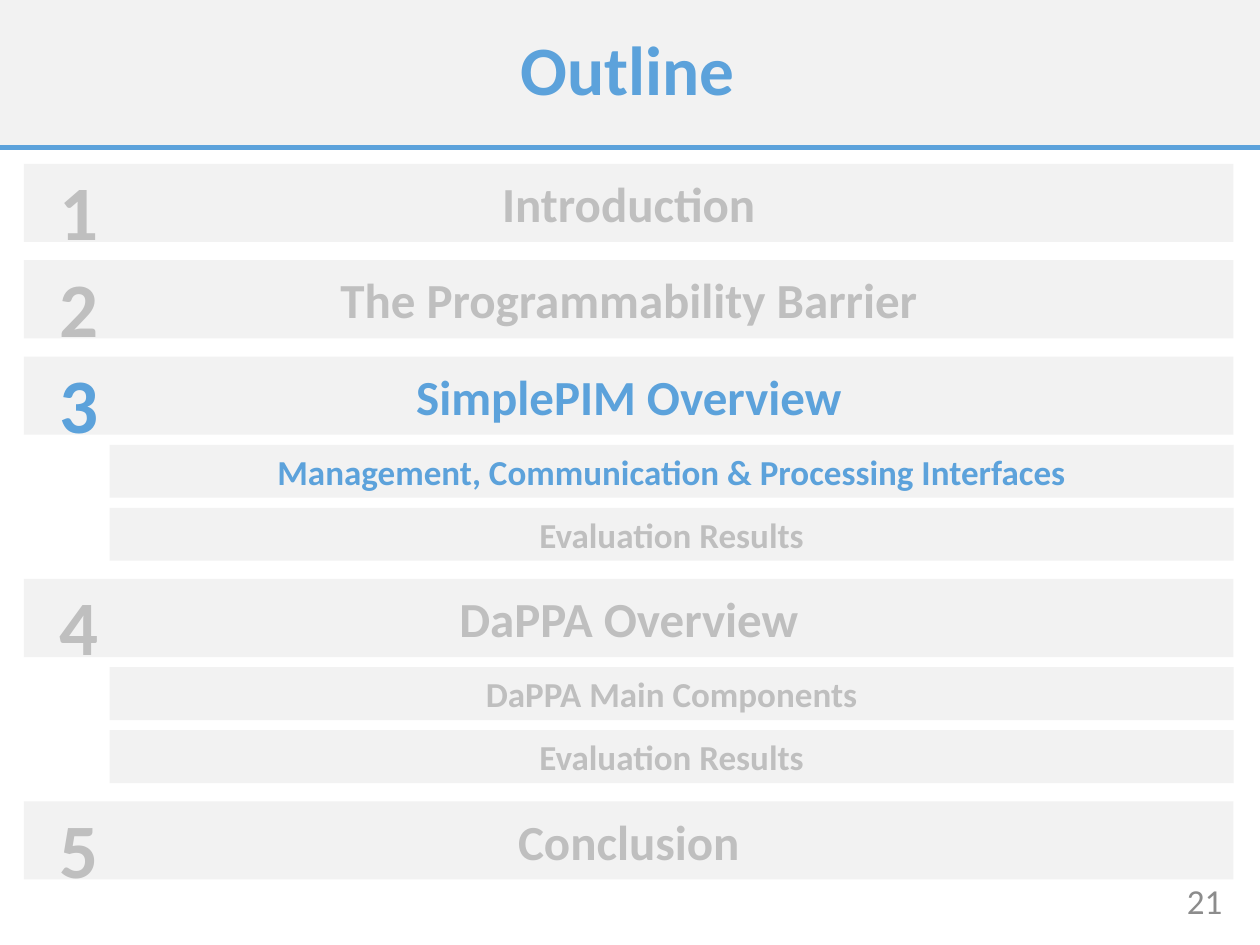
from dataclasses import dataclass

from pptx import Presentation
from pptx import util as u
from pptx.dml.color import RGBColor
from pptx.enum import shapes, text
from pptx.oxml.ns import qn
from lxml import etree

PX = u.Inches(1) // 200  # one scale: 200 px to the inch
COLORS = {"accent": "5CA2DB", "muted": "BFBFBF", "panel": "F2F2F2", "number": "8C8C8C"}
FONT = "Calibri"

# Outline grid, in px
LEFT, RIGHT, FIRST_TOP = 38, 1958, 260
BAR_HEIGHT, SECTION_GAP = 124, 29
SUB_LEFT, SUB_HEIGHT, SUB_GAP = 174, 84, 16
NUMBER_WIDTH = 176


@dataclass(frozen=True)
class Topic:
    label: str
    active: bool = False

    @property
    def color(self) -> str:
        return "accent" if self.active else "muted"


@dataclass(frozen=True)
class Section:
    topic: Topic
    subtopics: tuple[Topic, ...] = ()


SECTIONS = (
    Section(Topic("Introduction")),
    Section(Topic("The Programmability Barrier")),
    Section(Topic("SimplePIM Overview", True), (
        Topic("Management, Communication & Processing Interfaces", True),
        Topic("Evaluation Results"),
    )),
    Section(Topic("DaPPA Overview"), (
        Topic("DaPPA Main Components"),
        Topic("Evaluation Results"),
    )),
    Section(Topic("Conclusion")),
)


def rgb(name: str) -> RGBColor:
    return RGBColor.from_string(COLORS[name])


def px(*lengths: int) -> list[int]:
    return [length * PX for length in lengths]


def write(shape, words: str, size: float, color: str, bold: bool = True,
          align=text.PP_ALIGN.CENTER, anchor=text.MSO_ANCHOR.MIDDLE):
    frame = shape.text_frame
    frame.word_wrap = True
    frame.vertical_anchor = anchor
    paragraph = frame.paragraphs[0]
    paragraph.text = words
    paragraph.alignment = align
    font = paragraph.font
    font.name, font.size, font.bold = FONT, u.Pt(size), bold
    font.color.rgb = rgb(color)
    return frame


def add_panel(parent, left: int, top: int, width: int, height: int):
    panel = parent.add_shape(shapes.MSO_SHAPE.RECTANGLE, *px(left, top, width, height))
    panel.shadow.inherit = False
    panel.fill.solid()
    panel.fill.fore_color.rgb = rgb("panel")
    panel.line.fill.background()
    return panel


def add_section(slide, number: int, section: Section, top: int) -> int:
    """Draw a numbered section with its subtopics; return its bottom edge."""
    group = slide.shapes.add_group_shape().shapes
    topic = section.topic
    bar = add_panel(group, LEFT, top, RIGHT - LEFT, BAR_HEIGHT)
    write(bar, topic.label, 28, topic.color)

    numeral = group.add_textbox(*px(LEFT, top, NUMBER_WIDTH, BAR_HEIGHT))
    frame = write(numeral, str(number), 44, topic.color, anchor=text.MSO_ANCHOR.TOP)
    frame.margin_top = frame.margin_bottom = 0

    bottom = top + BAR_HEIGHT
    for subtopic in section.subtopics:
        sub_top = bottom + SUB_GAP
        sub_bar = add_panel(group, SUB_LEFT, sub_top, RIGHT - SUB_LEFT, SUB_HEIGHT)
        write(sub_bar, subtopic.label, 20, subtopic.color)
        bottom = sub_top + SUB_HEIGHT
    return bottom


def main() -> None:
    deck = Presentation()
    deck.slide_width, deck.slide_height = px(2000, 1500)
    slide = deck.slides.add_slide(deck.slide_layouts[6])

    # Header band, page number and rule
    add_panel(slide.shapes, 0, 0, 2000, 234)
    page_number = slide.shapes.add_textbox(*px(1744, 1390, 216, 80))
    write(page_number, "21", 20, "number", bold=False, align=text.PP_ALIGN.RIGHT)
    rule = slide.shapes.add_connector(shapes.MSO_CONNECTOR.STRAIGHT, *px(0, 234, 2000, 234))
    rule.line.color.rgb = rgb("accent")
    rule.line.width = u.Pt(3)
    etree.SubElement(rule.line._get_or_add_ln().getparent(), qn("a:effectLst"))

    # Title
    title = slide.shapes.add_textbox(*px(36, 50, 1946, 132))
    write(title, "Outline ", 39.6, "accent").paragraphs[0].line_spacing = 0.9

    # Outline sections
    top = FIRST_TOP
    for number, section in enumerate(SECTIONS, start=1):
        top = add_section(slide, number, section, top) + SECTION_GAP

    deck.save("out.pptx")


if __name__ == "__main__":
    main()
